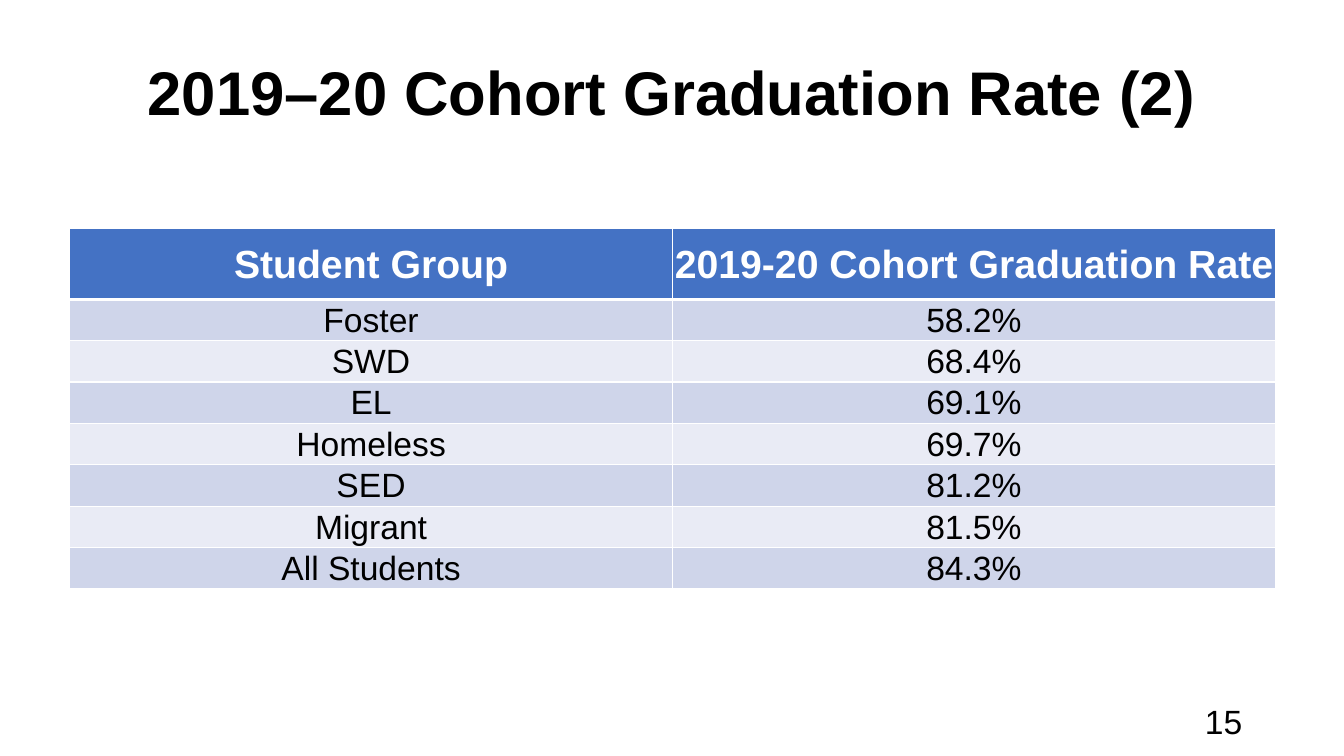
from dataclasses import dataclass

from lxml import etree
from pptx import Presentation
from pptx.dml.color import RGBColor
from pptx.enum.text import MSO_ANCHOR, PP_ALIGN
from pptx.oxml.ns import qn
from pptx.slide import Slide
from pptx.table import _Cell
from pptx.text.text import TextFrame
from pptx.util import Inches, Pt

CENTER = PP_ALIGN.CENTER
RIGHT = PP_ALIGN.RIGHT
MIDDLE = MSO_ANCHOR.MIDDLE

BLACK = RGBColor(0x00, 0x00, 0x00)
WHITE = RGBColor(0xFF, 0xFF, 0xFF)
BLUE = RGBColor(0x44, 0x72, 0xC4)
DARK = RGBColor(0xCF, 0xD5, 0xEA)
LIGHT = RGBColor(0xE9, 0xEB, 0xF5)

FONT = "Arial"
COL_W = 5.98
HEAD_H = 0.7
ROW_H = 0.41


@dataclass
class Style:
    size: int
    color: RGBColor = BLACK
    bold: bool = False
    align: PP_ALIGN = CENTER


@dataclass
class Label:
    text: str
    left: float
    top: float
    width: float
    height: float
    style: Style


@dataclass
class Rate:
    group: str
    value: str


HEAD = Style(28, WHITE, True)
BODY = Style(24)

LABELS = [
    Label("2019–20 Cohort Graduation Rate (2)", 0, 0, 13.33, 1.8, Style(44, bold=True)),
    Label("15", 9.42, 6.95, 3, 0.4, Style(24, align=RIGHT)),
]

RATES = [
    Rate("Student Group", "2019-20 Cohort Graduation Rate"),
    Rate("Foster", "58.2%"),
    Rate("SWD", "68.4%"),
    Rate("EL", "69.1%"),
    Rate("Homeless", "69.7%"),
    Rate("SED", "81.2%"),
    Rate("Migrant", "81.5%"),
    Rate("All Students", "84.3%"),
]


def write(frame: TextFrame, text: str, style: Style) -> None:
    para = frame.paragraphs[0]
    para.alignment = style.align
    run = para.add_run()
    run.text = text
    run.font.name = FONT
    run.font.size = Pt(style.size)
    run.font.bold = style.bold
    run.font.color.rgb = style.color


def add_label(slide: Slide, label: Label) -> None:
    box = slide.shapes.add_textbox(
        Inches(label.left), Inches(label.top), Inches(label.width), Inches(label.height)
    )
    frame = box.text_frame
    frame.word_wrap = True
    frame.vertical_anchor = MIDDLE
    write(frame, label.text, label.style)


def add_edge(cell: _Cell, side: str, width: int) -> None:
    """Draw a white border on one side: L, R, T or B."""
    props = cell._tc.get_or_add_tcPr()
    line = etree.SubElement(props, qn(f"a:ln{side}"), w=str(Pt(width)))
    fill = etree.SubElement(line, qn("a:solidFill"))
    etree.SubElement(fill, qn("a:srgbClr"), val=str(WHITE))


def fill_cell(cell: _Cell, text: str, row: int) -> None:
    cell.margin_left = cell.margin_right = cell.margin_top = Inches(0.01)
    cell.margin_bottom = 0
    cell.vertical_anchor = MIDDLE
    top = 3 if row == 1 else 1
    bottom = 3 if row == 0 else 1
    for side, width in (("L", 1), ("R", 1), ("T", top), ("B", bottom)):
        add_edge(cell, side, width)
    cell.fill.solid()
    cell.fill.fore_color.rgb = BLUE if row == 0 else DARK if row % 2 else LIGHT
    write(cell.text_frame, text, BODY if row else HEAD)


def add_rates(slide: Slide) -> None:
    height = HEAD_H + ROW_H * (len(RATES) - 1)
    table = slide.shapes.add_table(
        len(RATES), 2, Inches(0.69), Inches(2.27), Inches(2 * COL_W), Inches(height)
    ).table
    for col in table.columns:
        col.width = Inches(COL_W)
    for row, rate in enumerate(RATES):
        table.rows[row].height = Inches(ROW_H if row else HEAD_H)
        for col, text in enumerate((rate.group, rate.value)):
            fill_cell(table.cell(row, col), text, row)


def main() -> None:
    deck = Presentation()
    deck.slide_width = Inches(13.33)
    deck.slide_height = Inches(7.5)
    slide = deck.slides.add_slide(deck.slide_layouts[6])
    for label in LABELS:
        add_label(slide, label)
    add_rates(slide)
    deck.save("out.pptx")


if __name__ == "__main__":
    main()
